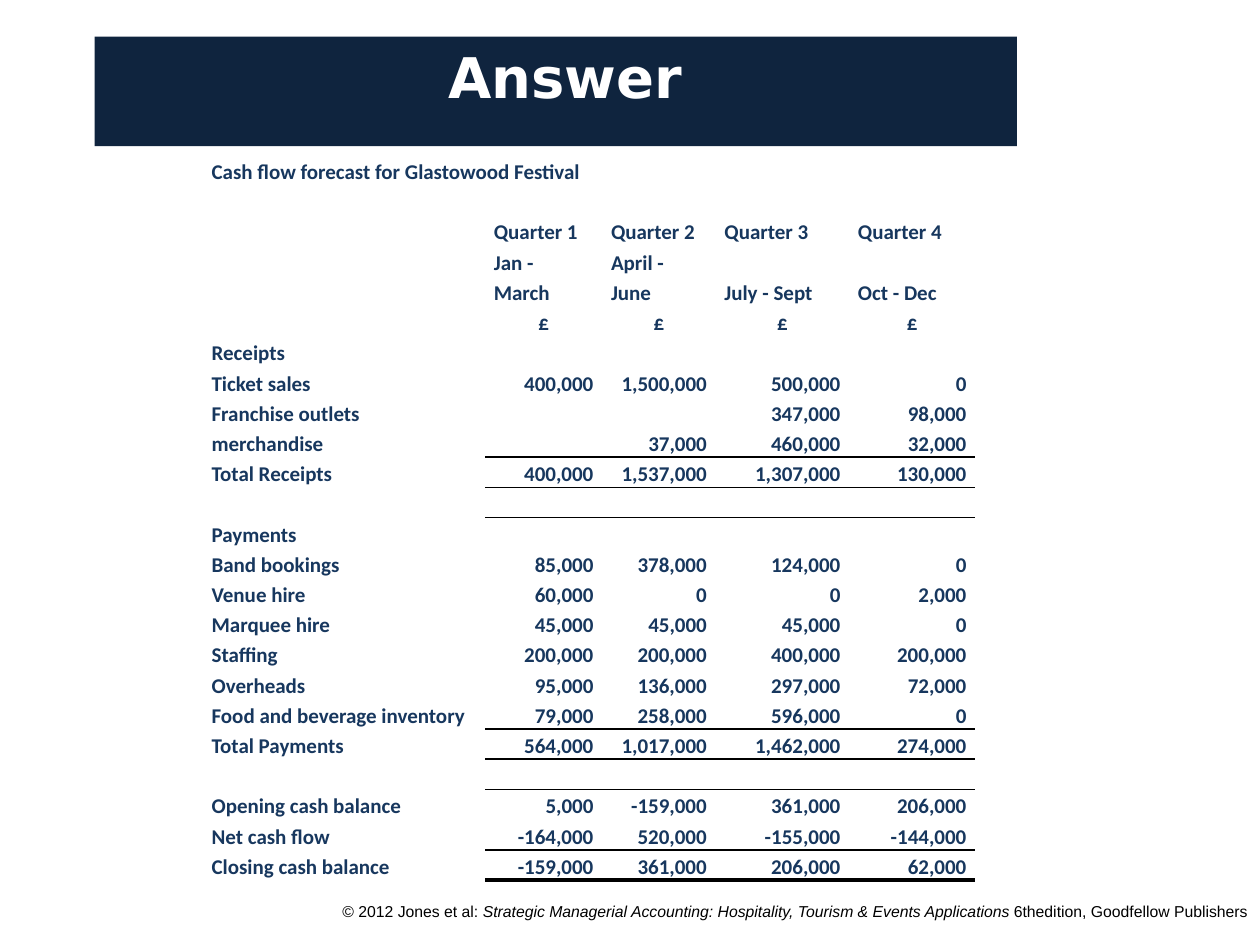
from lxml.etree import SubElement
from pptx import Presentation
from pptx.dml.color import RGBColor
from pptx.enum.shapes import MSO_SHAPE
from pptx.enum.text import MSO_ANCHOR, PP_ALIGN
from pptx.oxml import parse_xml
from pptx.oxml.ns import nsdecls, qn
from pptx.util import Inches, Pt

NAVY = RGBColor(0x0F, 0x24, 0x3E)
BLUE = RGBColor(0x17, 0x37, 0x5E)
WHITE = RGBColor(0xFF, 0xFF, 0xFF)
BLACK = RGBColor(0, 0, 0)

COLS = [2.24, 0.93, 0.9, 1.06, 1]
PITCH = 0.24
HEADS = range(2, 4)
SIGNS = 4
RULES = {8: 1, 9: 1, 17: 1, 18: 1, 21: 1, 22: 2.25}
BLANK = [""] * 5
ROWS = [
    ["Cash flow forecast for Glastowood Festival", "", "", "", ""],
    BLANK,
    ["", "Quarter 1", "Quarter 2", "Quarter 3", "Quarter 4"],
    ["", "Jan - March", "April - June", "July - Sept", "Oct - Dec"],
    ["", "£", "£", "£", "£"],
    ["Receipts", "", "", "", ""],
    ["Ticket sales", "400,000", "1,500,000", "500,000", "0"],
    ["Franchise outlets", "", "", "347,000", "98,000"],
    ["merchandise", "", "37,000", "460,000", "32,000"],
    ["Total Receipts", "400,000", "1,537,000", "1,307,000", "130,000"],
    BLANK,
    ["Payments", "", "", "", ""],
    ["Band bookings", "85,000", "378,000", "124,000", "0"],
    ["Venue hire", "60,000", "0", "0", "2,000"],
    ["Marquee hire", "45,000", "45,000", "45,000", "0"],
    ["Staffing", "200,000", "200,000", "400,000", "200,000"],
    ["Overheads", "95,000", "136,000", "297,000", "72,000"],
    ["Food and beverage inventory", "79,000", "258,000", "596,000", "0"],
    ["Total Payments", "564,000", "1,017,000", "1,462,000", "274,000"],
    BLANK,
    ["Opening cash balance", "5,000", "-159,000", "361,000", "206,000"],
    ["Net cash flow", "-164,000", "520,000", "-155,000", "-144,000"],
    ["Closing cash balance", "-159,000", "361,000", "206,000", "62,000"],
]


def write(frame, *parts, size, face, color, bold=False, slant=None,
          align=PP_ALIGN.LEFT, lead=None, after=None):
    frame.word_wrap = True
    para = frame.paragraphs[0]
    para.alignment = align
    if lead:
        para.line_spacing = lead
    if after:
        para.space_after = Pt(after)
    for spot, text in enumerate(parts):
        if not text:
            SubElement(para._p, qn("a:endParaRPr"), sz=str(size * 100))
            continue
        run = para.add_run()
        run.text = text
        font = run.font
        font.size, font.name = Pt(size), face
        font.bold, font.italic = bold, spot == slant
        font.color.rgb = color


def banner(slide, left, top, width, height):
    box = slide.shapes.add_shape(MSO_SHAPE.RECTANGLE, left, top, width, height)
    box.shadow.inherit = False
    box.fill.solid()
    box.fill.fore_color.rgb = NAVY
    box.line.fill.background()
    box.text_frame.vertical_anchor = MSO_ANCHOR.TOP
    write(box.text_frame, " Answer", size=32, face="DejaVu Sans",
          color=WHITE, bold=True, align=PP_ALIGN.CENTER)


def edge(cell, side, width, spot):
    line = parse_xml(
        f'<a:{side} {nsdecls("a")} w="{Pt(width)}"><a:solidFill>'
        f'<a:srgbClr val="{BLACK}"/></a:solidFill></a:{side}>')
    cell._tc.get_or_add_tcPr().insert(spot, line)


def align_of(row, col):
    if col == 0 or row in HEADS:
        return PP_ALIGN.LEFT
    return PP_ALIGN.CENTER if row == SIGNS else PP_ALIGN.RIGHT


def ledger(slide, left, top, width, height):
    frame = slide.shapes.add_table(len(ROWS), len(COLS), left, top, width, height)
    table = frame.table
    table.first_row = table.horz_banding = False
    style = table._tbl.tblPr.find(qn("a:tableStyleId"))
    style.text = "{2D5ABB26-0587-4C30-8999-92F81FD0307C}"
    for col, size in zip(table.columns, COLS):
        col.width = Inches(size)
    for row, texts in enumerate(ROWS):
        table.rows[row].height = Inches(PITCH * (2 if row == 3 else 1))
        for col, text in enumerate(texts):
            cell = table.cell(row, col)
            cell.fill.background()
            cell.vertical_anchor = MSO_ANCHOR.BOTTOM
            cell.margin_left = cell.margin_right = Inches(0.07)
            cell.margin_top = cell.margin_bottom = 0
            write(cell.text_frame, text, size=12, face="Calibri", color=BLUE,
                  bold=True, align=align_of(row, col), lead=1.15, after=10)
            if col:
                sides = [("lnT", RULES.get(row - 1)), ("lnB", RULES.get(row))]
                drawn = [(side, size) for side, size in sides if size]
                for spot, (side, size) in enumerate(drawn):
                    edge(cell, side, size, spot)
    table.cell(0, 0).merge(table.cell(0, 2))


def footer(slide, left, top, width, height):
    box = slide.shapes.add_textbox(left, top, width, height)
    write(box.text_frame, "© 2012 Jones et al: ",
          "Strategic Managerial Accounting: Hospitality, Tourism & Events Applications ",
          "6thedition, Goodfellow Publishers",
          size=9, face="Arial", color=BLACK, slant=1, align=PP_ALIGN.RIGHT)


def main():
    deck = Presentation()
    deck.slide_width, deck.slide_height = Inches(10), Inches(7.5)
    slide = deck.slides.add_slide(deck.slide_layouts[6])
    footer(slide, Inches(2.23), Inches(7.11), Inches(7.77), Inches(0.39))
    banner(slide, Inches(0.75), Inches(0.29), Inches(7.32), Inches(0.87))
    ledger(slide, Inches(1.61), Inches(1.23), Inches(6.13), Inches(5.76))
    deck.save("out.pptx")


if __name__ == "__main__":
    main()
